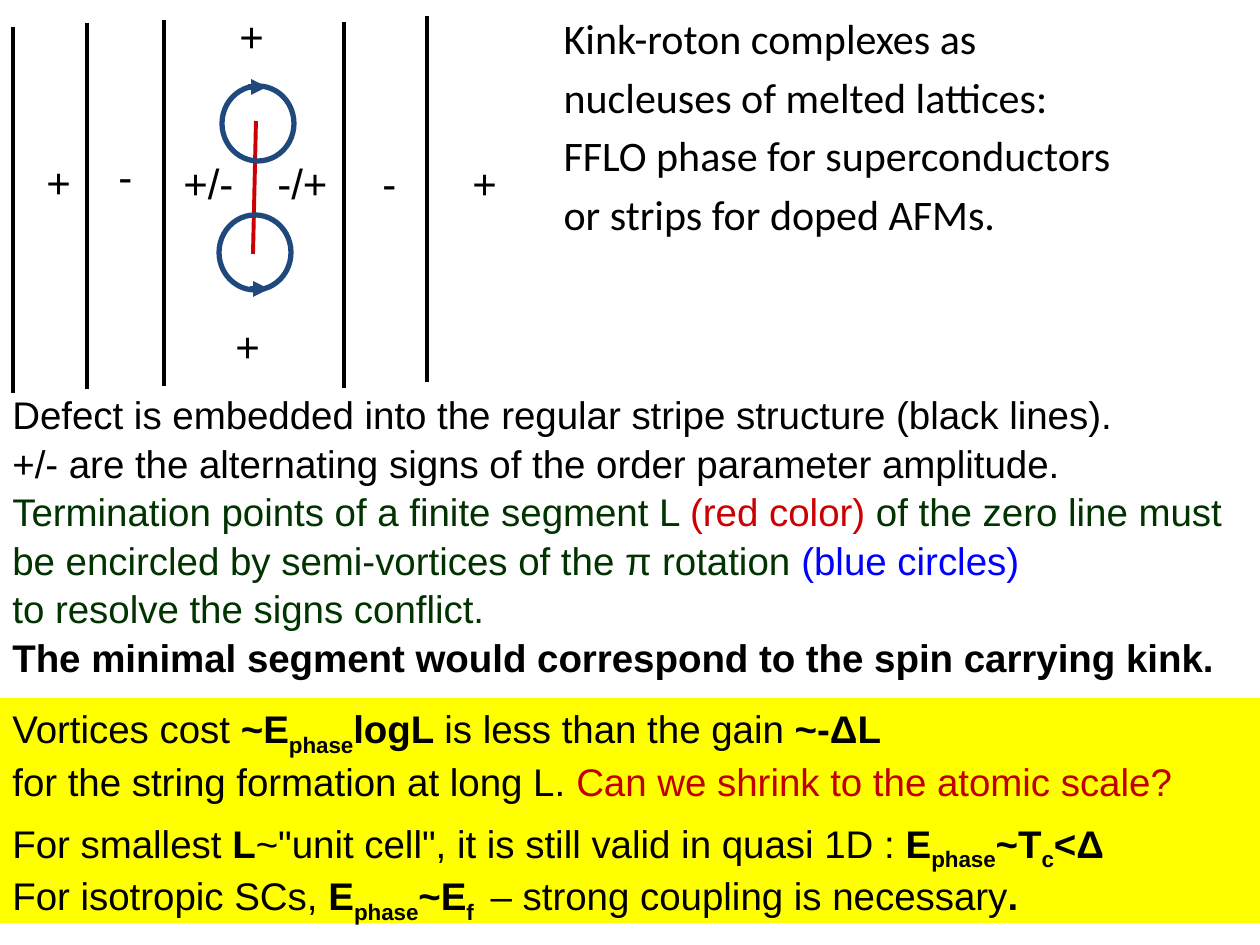
from pptx import Presentation
from pptx import util as u
from pptx.dml.color import RGBColor
from pptx.enum import shapes, text
from pptx.oxml.ns import qn
from lxml import etree

SCALE = u.Inches(1) / 126
COLORS = {
    "black": "000000", "red": "CC0000", "crimson": "C00000", "green": "003300",
    "blue": "0000FF", "navy": "1F497D", "yellow": "FFFF00",
}


def px(*lengths):
    return [u.Emu(round(length * SCALE)) for length in lengths]


def rgb(name):
    return RGBColor.from_string(COLORS[name])


def apply(target, values):
    for name, value in values.items():
        setattr(target, name, value)


class SlideKit:
    """Draws styled elements on the current slide."""

    def __init__(self, page, font="Arial"):
        self.page = page
        self.font = font

    def add_text(self, box, paras, size, font=None, frame=None, formats=None):
        holder = box.text_frame
        apply(holder, {"word_wrap": True, "vertical_anchor": text.MSO_ANCHOR.TOP, **(frame or {})})
        for index, spans in enumerate(paras):
            para = holder.paragraphs[0] if index == 0 else holder.add_paragraph()
            apply(para, (formats or {}).get("all", {}))
            apply(para, (formats or {}).get(index, {}))
            for words, color, style in spans:
                span = para.add_run()
                span.text = words
                apply(span.font, {"name": font or self.font, "size": u.Pt(size), "bold": "b" in style})
                span.font.color.rgb = rgb(color)
                if "sub" in style:
                    span.font._element.set("baseline", "-25000")

    def body(self, area, lines, size, font):
        box = self.page.placeholders[1]
        apply(box, dict(zip(("left", "top", "width", "height"), px(*area))))
        self.add_text(box, [[(line, "black", "")] for line in lines], size, font)
        for para in box.text_frame.paragraphs:
            props = para._p.get_or_add_pPr()
            props.set("marL", "342900")
            props.set("indent", "-342900")
            etree.SubElement(props, qn("a:buNone"))

    def label(self, area, paras, size, **options):
        box = self.page.shapes.add_textbox(*px(*area))
        self.add_text(box, paras, size, **options)

    def line(self, start, end, color, width, arrow=False):
        stroke = self.page.shapes.add_connector(shapes.MSO_CONNECTOR.STRAIGHT, *px(*start, *end))
        stroke.line.width = u.Pt(width)
        stroke.line.color.rgb = rgb(color)
        if arrow:
            etree.SubElement(stroke.line._get_or_add_ln(), qn("a:tailEnd"), type="triangle")
        etree.SubElement(stroke._element.spPr, qn("a:effectLst"))

    def shape(self, kind, area, color, width, filled=False):
        box = self.page.shapes.add_shape(kind, *px(*area))
        box.shadow.inherit = False
        if filled:
            box.fill.solid()
            box.fill.fore_color.rgb = rgb(color)
        else:
            box.fill.background()
        box.line.color.rgb = rgb(color)
        box.line.width = u.Pt(width)
        return box


HEADING = [
    "Kink-roton complexes as",
    "nucleuses of melted lattices:",
    "FFLO phase for superconductors",
    "or strips for doped AFMs.",
]
STRIPES = [(13, 27), (87, 23), (164, 20), (344, 22), (427, 16)]
SIGNS = [
    ("+", 34, 150, 50), ("-", 106, 144, 40), ("+/-", 171, 151, 76), ("+", 227, 4, 50),
    ("+", 223, 314, 50), ("-/+", 265, 151, 76), ("-", 370, 151, 39), ("+", 460, 151, 120),
]
VORTICES = [(222, 86, 248, 87), (219, 215, 250, 289)]
EXPLANATION = [
    [("Defect is embedded into the regular stripe structure (black lines).", "black", "")],
    [("+/- are the alternating signs of the order parameter amplitude.", "black", "")],
    [("Termination points of a finite segment L ", "green", ""),
     ("(red color)", "red", ""),
     (" of the zero line must be encircled by semi-vortices of the π rotation ", "green", ""),
     ("(blue circles)", "blue", "")],
    [("to resolve the signs conflict.", "green", "")],
    [("The minimal segment would correspond to the spin carrying kink.", "black", "b")],
]
ENERGY = [
    [("Vortices cost ", "black", ""), ("~E", "black", "b"), ("phase", "black", "b sub"),
     ("logL ", "black", "b"), ("is less than the gain ", "black", ""), ("~-ΔL", "black", "b")],
    [("for the string formation at long L. ", "black", ""),
     ("Can we shrink to the atomic scale?", "crimson", "")],
    [("For smallest ", "black", ""), ("L", "black", "b"),
     ("~\"unit cell\", it is still valid in quasi 1D : ", "black", ""), ("E", "black", "b"),
     ("phase", "black", "b sub"), ("~T", "black", "b"), ("c", "black", "b sub"),
     ("<Δ", "black", "b")],
    [("For isotropic SCs, ", "black", ""), ("E", "black", "b"), ("phase", "black", "b sub"),
     ("~E", "black", "b"), ("f ", "black", "b sub"),
     (" – strong coupling is necessary", "black", ""), (".", "black", "b")],
]


def main():
    deck = Presentation()
    deck.slide_width, deck.slide_height = px(1260, 945)
    page = deck.slides.add_slide(deck.slide_layouts[1])
    title = page.shapes.title._element
    title.getparent().remove(title)
    kit = SlideKit(page)

    kit.body((551, 6, 709, 244), HEADING, 24, "Calibri")
    for x, top in STRIPES:
        kit.line((x, top), (x, top + 366), "black", 2.25)
    kit.line((256, 121), (253, 254), "red", 2.25)
    for sign, left, top, width in SIGNS:
        kit.label((left, top, width, 63), [[(sign, "black", "")]], 24,
                  frame={"word_wrap": width == 120}, formats={0: {"space_before": u.Pt(2)}})
    for left, top, arrow_x, arrow_y in VORTICES:
        kit.shape(shapes.MSO_SHAPE.OVAL, (left, top, 72, 75), "navy", 3)
        kit.line((arrow_x, arrow_y), (arrow_x + 19, arrow_y), "navy", 3, arrow=True)

    kit.label((0, 383, 1260, 292), EXPLANATION, 22,
              formats={"all": {"line_spacing": 1.05}, 0: {"space_before": u.Pt(2)}})
    panel = kit.shape(shapes.MSO_SHAPE.RECTANGLE, (0, 699, 1260, 223), "yellow", 0.75, filled=True)
    kit.add_text(panel, ENERGY, 22,
                 formats={"all": {"alignment": text.PP_ALIGN.LEFT}, 2: {"space_before": u.Pt(9)}})
    deck.save("out.pptx")


if __name__ == "__main__":
    main()
